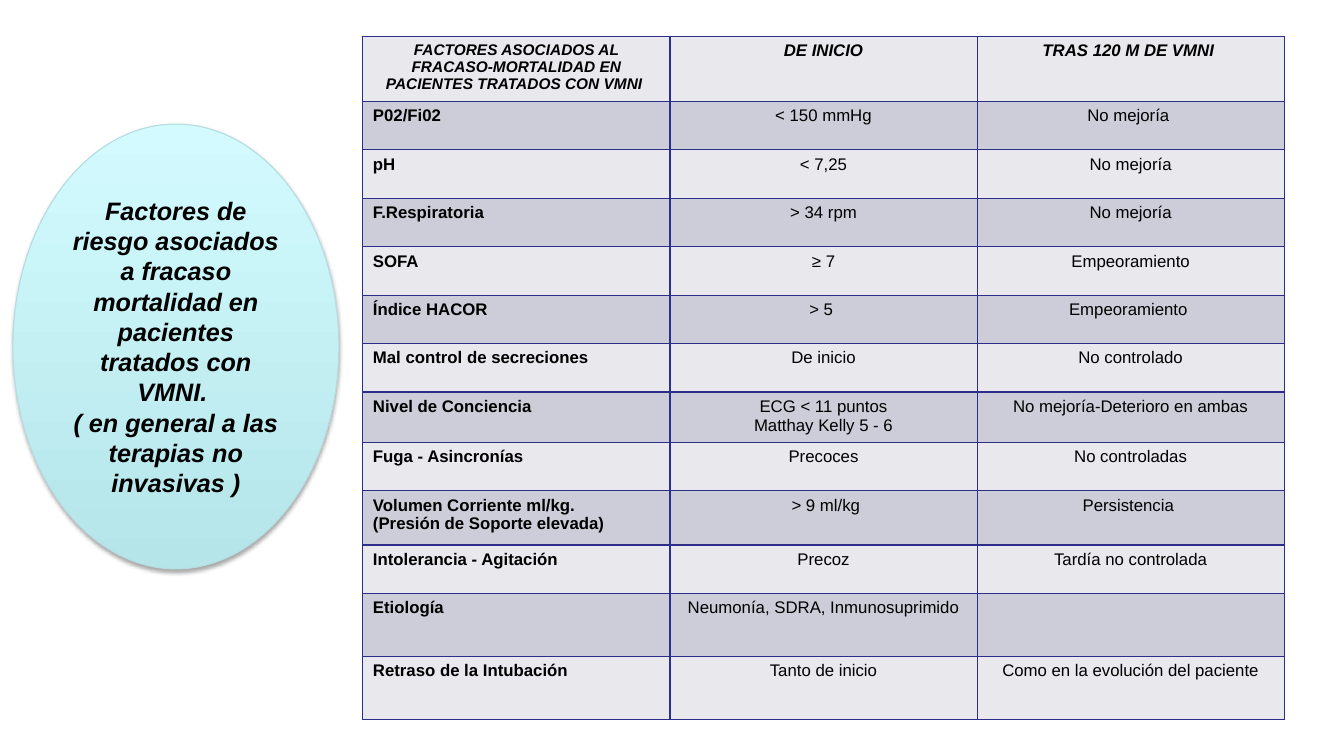
from pptx import Presentation
from pptx import util as u
from pptx.dml import color
from pptx.enum import shapes, text
from pptx.oxml import parse_xml
from pptx.oxml import ns

BLACK = color.RGBColor(0x00, 0x00, 0x00)
BORDER = color.RGBColor(0x2D, 0x2D, 0x8A)
LIGHT_ROW = color.RGBColor(0xE8, 0xE8, 0xED)
DARK_ROW = color.RGBColor(0xCD, 0xCD, 0xDA)
OVAL_BOTTOM = color.RGBColor(0xB5, 0xE5, 0xE9)
OVAL_TOP = color.RGBColor(0xD3, 0xFB, 0xFF)
OVAL_LINE = color.RGBColor(0xB6, 0xDC, 0xDF)

# Text formats
BASE = {"name": "Arial", "size": u.Pt(12), "bold": False, "italic": False}
LABEL = {**BASE, "bold": True}
HEADING = {**LABEL, "italic": True}
LONG_HEADING = {**HEADING, "size": u.Pt(11)}
OVAL_TEXT = {**HEADING, "size": u.Pt(18)}

# Table content: row height in points, then the three cells
ROWS = [
    (46.6, "FACTORES ASOCIADOS AL FRACASO-MORTALIDAD EN PACIENTES TRATADOS CON VMNI ",
     "DE INICIO", "TRAS 120 M DE VMNI "),
    (34.6, "P02/Fi02", "< 150 mmHg", "No mejoría "),
    (34.6, "pH", "< 7,25", "No mejoría"),
    (34.6, "F.Respiratoria", "> 34 rpm", "No mejoría"),
    (34.6, "SOFA", "≥ 7", "Empeoramiento"),
    (34.6, "Índice HACOR", "> 5 ", "Empeoramiento "),
    (34.6, "Mal control de secreciones", "De inicio", "No controlado"),
    (36, "Nivel de Conciencia", "ECG < 11 puntos\nMatthay Kelly 5 - 6",
     "No mejoría-Deterioro en ambas"),
    (34.6, "Fuga - Asincronías", "Precoces", "No controladas"),
    (38.8, "Volumen Corriente ml/kg.\n(Presión de Soporte elevada)",
     " > 9 ml/kg", "Persistencia "),
    (34.6, "Intolerancia - Agitación", "Precoz", "Tardía no controlada"),
    (45.1, "Etiología", "Neumonía, SDRA, Inmunosuprimido", ""),
    (45.1, "Retraso de la Intubación", "Tanto de inicio",
     "Como en la evolución del paciente"),
]
COLUMN_WIDTH = 219.4

OVAL_LINES = (
    "Factores de riesgo asociados a fracaso mortalidad en pacientes tratados con VMNI. \n"
    "( en general a las terapias no invasivas )"
)


def write_text(frame, content, font_format, alignment):
    frame.text = content
    for paragraph in frame.paragraphs:
        paragraph.alignment = alignment
        for name, value in font_format.items():
            setattr(paragraph.font, name, value)
        paragraph.font.color.rgb = BLACK
        for run in paragraph.runs:
            for name, value in font_format.items():
                setattr(run.font, name, value)
            run.font.color.rgb = BLACK


def add_borders(cell):
    properties = cell._tc.get_or_add_tcPr()
    for side in ("lnL", "lnR", "lnT", "lnB"):
        properties.append(parse_xml(
            f'<a:{side} {ns.nsdecls("a")} w="{u.Pt(1)}"><a:solidFill>'
            f'<a:srgbClr val="{BORDER}"/></a:solidFill></a:{side}>'))


def cell_format(row, column):
    if row == 0:
        return LONG_HEADING if column == 0 else HEADING
    return LABEL if column == 0 else BASE


def add_factor_table(slide):
    height = sum(row[0] for row in ROWS)
    frame = slide.shapes.add_table(
        len(ROWS), 3, u.Pt(259.2), u.Pt(25.9), u.Pt(3 * COLUMN_WIDTH), u.Pt(height))
    table = frame.table
    for column in table.columns:
        column.width = u.Pt(COLUMN_WIDTH)
    for row, (row_height, *contents) in enumerate(ROWS):
        table.rows[row].height = u.Pt(row_height)
        for column, content in enumerate(contents):
            cell = table.cell(row, column)
            add_borders(cell)
            cell.fill.solid()
            cell.fill.fore_color.rgb = DARK_ROW if row % 2 else LIGHT_ROW
            is_label = row > 0 and column == 0
            alignment = text.PP_ALIGN.LEFT if is_label else text.PP_ALIGN.CENTER
            write_text(cell.text_frame, content, cell_format(row, column), alignment)


def add_soft_shadow(shape):
    shape.shadow.inherit = False
    effects = shape._element.spPr.find(ns.qn("a:effectLst"))
    effects.append(parse_xml(
        f'<a:outerShdw {ns.nsdecls("a")} blurRad="{u.Pt(3.1)}" dist="{u.Pt(1.8)}" '
        'dir="5400000" rotWithShape="0"><a:srgbClr val="000000">'
        '<a:alpha val="35000"/></a:srgbClr></a:outerShdw>'))


def add_title_oval(slide):
    oval = slide.shapes.add_shape(
        shapes.MSO_SHAPE.OVAL, u.Pt(9.2), u.Pt(88.6), u.Pt(232.8), u.Pt(317.8))
    oval.fill.gradient()
    oval.fill.gradient_angle = 90
    for stop, stop_color in zip(oval.fill.gradient_stops, (OVAL_BOTTOM, OVAL_TOP)):
        stop.color.rgb = stop_color
    oval.line.color.rgb = OVAL_LINE
    oval.line.width = u.Pt(0.75)
    add_soft_shadow(oval)
    oval.text_frame.word_wrap = True
    oval.text_frame.vertical_anchor = text.MSO_ANCHOR.MIDDLE
    write_text(oval.text_frame, OVAL_LINES, OVAL_TEXT, text.PP_ALIGN.CENTER)


def main():
    presentation = Presentation()
    presentation.slide_width = u.Pt(960)
    presentation.slide_height = u.Pt(540)
    slide = presentation.slides.add_slide(presentation.slide_layouts[6])
    # Risk factors on the right, title on the left
    add_factor_table(slide)
    add_title_oval(slide)
    presentation.save("out.pptx")


if __name__ == "__main__":
    main()
